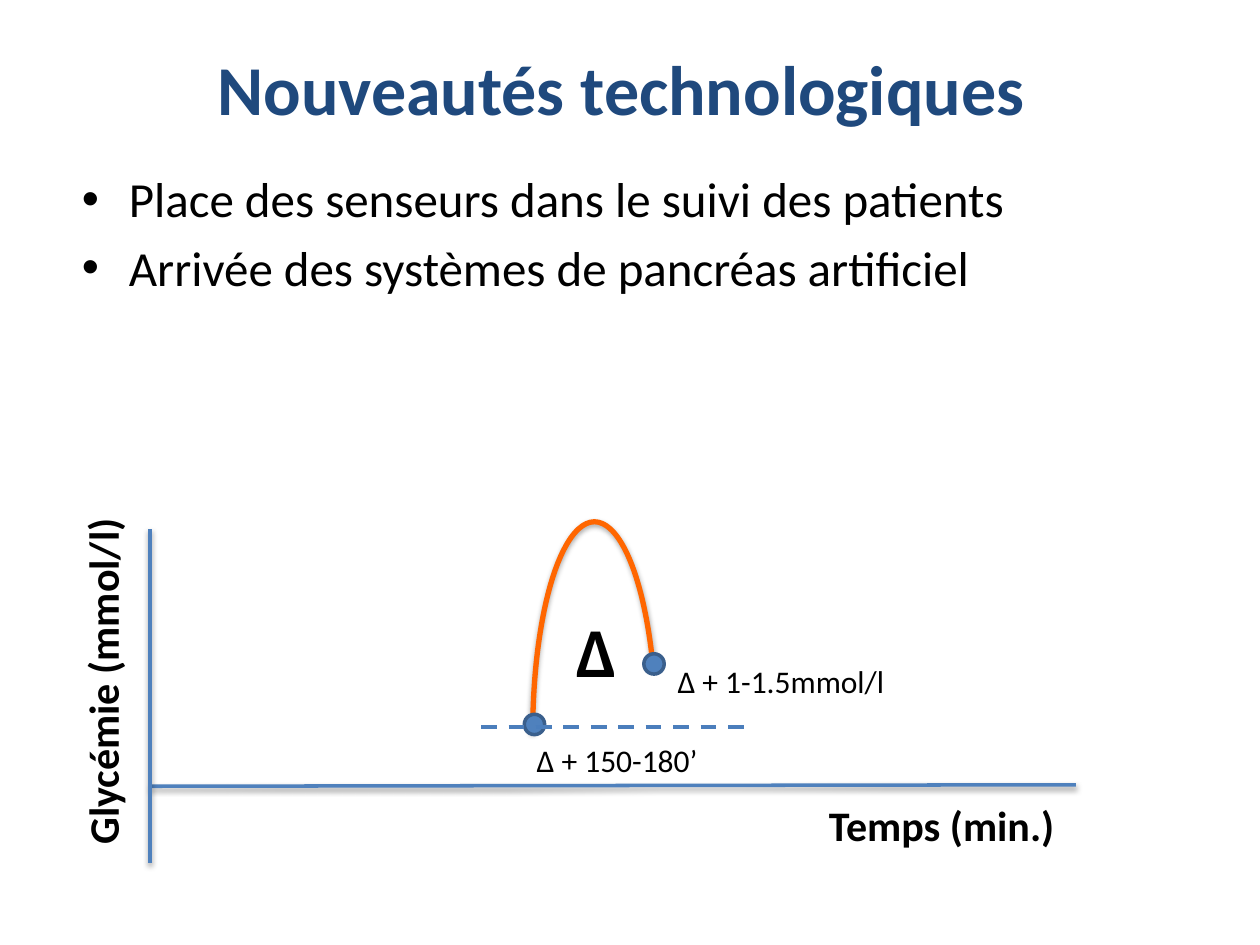
from lxml import etree
from pptx import Presentation
from pptx.dml.color import RGBColor
from pptx.enum import dml, shapes, text
from pptx.oxml import ns
from pptx.util import Cm, Pt

COLOURS = {
    "title": "1F497D", "text": "000000", "axis": "4F81BD", "dash": "4B7EBC",
    "marker_edge": "3A5F8C", "curve": "FF6600", "shadow": "000000",
    "curve_low": "3F80CE", "curve_high": "A4C4FF",
}
MARKER_SIZE = 0.41
ORIGIN_X = 3.02


def colour(name):
    return RGBColor.from_string(COLOURS[name])


def set_values(target, values):
    for name, value in values.items():
        setattr(target, name, value)


def set_line(line, name, width):
    line.color.rgb = colour(name)
    line.width = Pt(width)


def add_effects(shape, alpha=None, distance=0):
    """Give the shape its own effect list, with a soft shadow below if alpha is set."""
    effects = etree.SubElement(shape._element.spPr, ns.qn("a:effectLst"))
    if alpha is None:
        return
    shadow = etree.SubElement(
        effects, ns.qn("a:outerShdw"), blurRad=str(Pt(3.1)), dist=str(Pt(distance)),
        dir="5400000", rotWithShape="0")
    tint = etree.SubElement(shadow, ns.qn("a:srgbClr"), val=COLOURS["shadow"])
    etree.SubElement(tint, ns.qn("a:alpha"), val=str(alpha * 1000))


def add_bullet(para):
    properties = para._p.get_or_add_pPr()
    properties.set("marL", str(Cm(0.95)))
    properties.set("indent", str(-Cm(0.95)))
    etree.SubElement(properties, ns.qn("a:buFont"), typeface="Arial")
    etree.SubElement(properties, ns.qn("a:buChar"), char="•")


def add_text(page, place, lines, size, bold=False, name="text", bullets=False,
             frame_format=None, align=text.PP_ALIGN.LEFT, rotation=0):
    box = page.shapes.add_textbox(*map(Cm, place))
    box.rotation = rotation
    set_values(box.text_frame, frame_format or {
        "word_wrap": False, "auto_size": text.MSO_AUTO_SIZE.SHAPE_TO_FIT_TEXT})
    for index, line in enumerate(lines):
        para = box.text_frame.add_paragraph() if index else box.text_frame.paragraphs[0]
        para.alignment = align
        if index:
            para.space_before = Pt(size * 0.2)
        if bullets:
            add_bullet(para)
        span = para.add_run()
        span.text = line
        set_values(span.font, {"name": "Calibri", "size": Pt(size), "bold": bold})
        span.font.color.rgb = colour(name)


def add_line(page, ends, name, width, dash=None, **shadow):
    line = page.shapes.add_connector(shapes.MSO_CONNECTOR.STRAIGHT, *map(Cm, ends))
    set_line(line.line, name, width)
    if dash:
        line.line.dash_style = dash
    add_effects(line, **shadow)


def add_curve(group):
    curve = group.shapes.add_shape(
        shapes.MSO_SHAPE.BLOCK_ARC, Cm(10.74), Cm(10.52), Cm(2.49), Cm(8.53))
    for index, value in enumerate((109.999, 183.972, 0)):
        curve.adjustments[index] = value
    curve.fill.gradient()
    curve.fill.gradient_angle = 90
    for stop, name in zip(curve.fill.gradient_stops, ("curve_low", "curve_high")):
        stop.color.rgb = colour(name)
    set_line(curve.line, "curve", 3)
    add_effects(curve, alpha=35, distance=1.8)


def add_marker(group, left, top):
    marker = group.shapes.add_shape(
        shapes.MSO_SHAPE.OVAL, Cm(left), Cm(top), Cm(MARKER_SIZE), Cm(MARKER_SIZE))
    marker.shadow.inherit = False
    marker.fill.solid()
    marker.fill.fore_color.rgb = colour("axis")
    set_line(marker.line, "marker_edge", 2)


def main():
    deck = Presentation()
    deck.slide_width, deck.slide_height = Cm(25.4), Cm(19.05)
    page = deck.slides.add_slide(deck.slide_layouts[6])

    add_text(page, (1.09, 0.18, 22.86, 3.18), ["Nouveautés technologiques"], 40, True,
             "title", align=text.PP_ALIGN.CENTER,
             frame_format={"word_wrap": True, "vertical_anchor": text.MSO_ANCHOR.MIDDLE})
    add_text(page, (1.4, 3.28, 22.86, 12.57),
             ["Place des senseurs dans le suivi des patients",
              "Arrivée des systèmes de pancréas artificiel"],
             28, bullets=True, frame_format={"word_wrap": True})

    group = page.shapes.add_group_shape()
    add_curve(group)
    add_marker(group, 10.57, 14.4)
    add_marker(group, 12.98, 13.18)

    add_line(page, (ORIGIN_X, 15.85, 21.69, 15.82), "axis", 2, alpha=38, distance=1.6)
    add_line(page, (9.7, 14.66, 15.06, 14.66), "dash", 2.25, dml.MSO_LINE.DASH)
    add_line(page, (ORIGIN_X, 17.4, ORIGIN_X, 10.67), "axis", 2, alpha=38, distance=1.6)

    add_text(page, (13.41, 13.23, 4.72, 1.02), ["Δ + 1-1.5mmol/l"], 18)
    add_text(page, (16.46, 16, 5.18, 1.27), ["Temps (min.)"], 24, True)
    add_text(page, (-1.52, 13.06, 7.16, 1.27), ["Glycémie (mmol/l)"], 24, True, rotation=270)
    add_text(page, (10.57, 14.81, 3.78, 1.02), ["Δ + 150-180’"], 18)
    add_text(page, (11.38, 12.12, 1.35, 1.96), ["Δ"], 40, True)

    deck.save("out.pptx")


if __name__ == "__main__":
    main()
